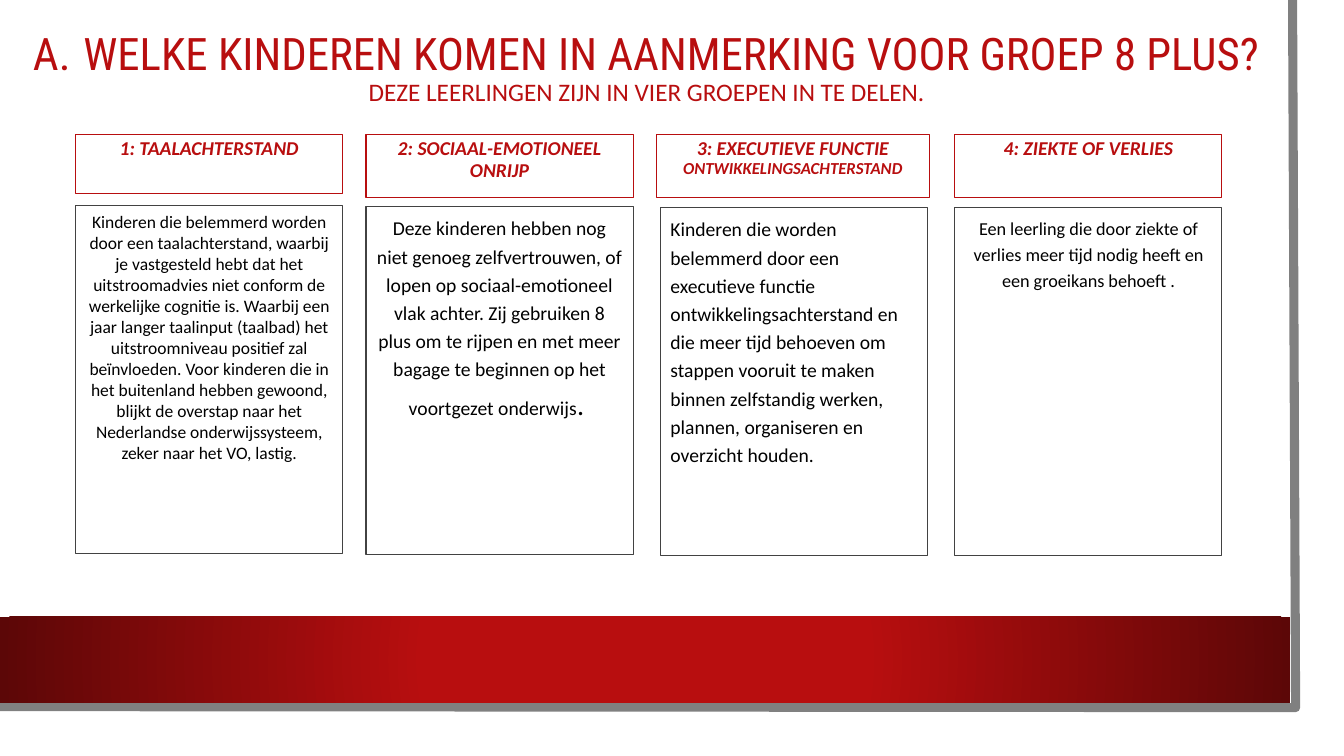
from lxml import etree
from pptx import Presentation
from pptx.dml.color import RGBColor
from pptx.enum.shapes import MSO_SHAPE as Shape
from pptx.enum.text import MSO_ANCHOR as Anchor, MSO_AUTO_SIZE as Auto, PP_ALIGN as Align
from pptx.oxml import parse_xml
from pptx.oxml.ns import nsdecls, qn
from pptx.util import Inches, Pt

RED, DARK, GREY, BLACK = "B80E0F", "5C0707", "424242", "000000"
HEAD = {"size": Pt(14), "bold": True, "italic": True}
WIDTH = 2.65

# left, head left, head width, head height, head runs
HEADS = [
    (0.75, WIDTH, 0.59, [("1: TAALACHTERSTAND", HEAD)]),
    (3.63, WIDTH, 0.63, [("2: SOCIAAL-EMOTIONEEL ONRIJP", HEAD)]),
    (6.51, 2.71, 0.63, [("3: EXECUTIEVE FUNCTIE ", HEAD),
                        ("ONTWIKKELINGSACHTERSTAND", HEAD | {"size": Pt(12)})]),
    (9.47, WIDTH, 0.63, [("4: ZIEKTE OF VERLIES", HEAD)]),
]

# left, top, alignment, line spacing, runs
BODIES = [
    (0.75, 2.04, Align.CENTER, 1.0, [(
        "Kinderen die belemmerd worden door een taalachterstand, waarbij je "
        "vastgesteld hebt dat het uitstroomadvies niet conform de werkelijke "
        "cognitie is. Waarbij een jaar langer taalinput (taalbad) het "
        "uitstroomniveau positief zal beïnvloeden. Voor kinderen die in het "
        "buitenland hebben gewoond, blijkt de overstap naar het Nederlandse "
        "onderwijssysteem, zeker naar het VO, lastig.", {"size": Pt(12.5)})]),
    (3.63, 2.05, Align.CENTER, 1.2, [(
        "Deze kinderen hebben nog niet genoeg zelfvertrouwen, of lopen op "
        "sociaal-emotioneel vlak achter. Zij gebruiken 8 plus om te rijpen en "
        "met meer bagage te beginnen op het voortgezet onderwijs",
        {"size": Pt(14)}), (". ", {"size": Pt(20)})]),
    (6.55, 2.06, Align.LEFT, 1.2, [(
        "Kinderen die worden belemmerd door een executieve functie "
        "ontwikkelingsachterstand en die meer tijd behoeven om stappen vooruit "
        "te maken binnen zelfstandig werken, plannen, organiseren en overzicht "
        "houden.", {"size": Pt(14)})]),
    (9.47, 2.06, Align.CENTER, 1.2, [(
        "Een leerling die door ziekte of verlies meer tijd nodig heeft en een "
        "groeikans behoeft .", {"size": Pt(13)})]),
]


def rgb(color):
    return RGBColor.from_string(color)


def add_run(para, text, color, form):
    run = para.add_run()
    run.text = text
    run.font.color.rgb = rgb(color)
    for key, value in ({"name": "Calibri"} | form).items():
        setattr(run.font, key, value)


def add_rect(slide, left, top, width, height):
    rect = slide.shapes.add_shape(
        Shape.RECTANGLE, *map(Inches, (left, top, width, height)))
    rect.shadow.inherit = False
    rect.line.fill.background()
    return rect


def add_box(slide, place, edge, color, align, space, runs):
    box = add_rect(slide, *place)
    box.fill.background()
    box.line.color.rgb = rgb(edge)
    box.line.width = Pt(0.75)
    frame = box.text_frame
    frame.word_wrap = True
    frame.vertical_anchor = Anchor.TOP
    para = frame.paragraphs[0]
    para.alignment = align
    para.line_spacing = space
    for text, form in runs:
        add_run(para, text, color, form)


def add_page(slide):
    """Draw the white sheet with its grey edge along the right and bottom."""
    sheet = add_rect(slide, 0, 0, 13.1, 7.27)
    sheet.fill.solid()
    sheet.fill.fore_color.rgb = rgb("FFFFFF")
    build = slide.shapes.build_freeform(Inches(12.82), 0)
    build.add_line_segments(
        [(Inches(12.85), Inches(7.02)), (Inches(-0.03), Inches(7.01))], close=False)
    edge = build.convert_to_shape()
    edge.shadow.inherit = False
    edge.fill.background()
    edge.line.color.rgb = rgb("808080")
    edge.line.width = Pt(6.5)


def add_band(slide):
    band = add_rect(slide, 0, 6.12, 12.8, 0.85)
    band.fill.gradient()
    stops = zip(band.fill.gradient_stops, ((0.34, RED), (1, DARK)))
    for stop, (place, color) in stops:
        stop.position = place
        stop.color.rgb = rgb(color)
    grad = band.element.spPr.find(qn("a:gradFill"))
    grad.replace(grad.find(qn("a:lin")), parse_xml(
        f'<a:path {nsdecls("a")} path="circle">'
        '<a:fillToRect l="50000" t="50000" r="50000" b="50000"/></a:path>'))


def set_title(slide):
    title = slide.shapes.title
    title.left, title.top, title.width, title.height = map(
        Inches, (0.13, 0, 12.57, 1.38))
    frame = title.text_frame
    frame.word_wrap = True
    frame.auto_size = Auto.NONE
    frame.vertical_anchor = Anchor.MIDDLE
    para = frame.paragraphs[0]
    para.alignment = Align.CENTER
    para.line_spacing = 0.9
    add_run(para, "A.\tWELKE KINDEREN KOMEN IN AANMERKING VOOR GROEP 8 PLUS?",
            RED, {"name": "Roboto Condensed", "size": Pt(32)})
    para.add_line_break()
    add_run(para, "DEZE LEERLINGEN ZIJN IN VIER GROEPEN IN TE DELEN.",
            RED, {"size": Pt(18)})
    # Bring the title in front of the page and band
    slide.shapes.element.append(title.element)


def main():
    deck = Presentation()
    deck.slide_width, deck.slide_height = Inches(13.33), Inches(7.5)
    slide = deck.slides.add_slide(deck.slide_layouts[5])
    add_page(slide)
    add_band(slide)
    set_title(slide)
    for left, width, height, runs in HEADS:
        add_box(slide, (left, 1.33, width, height), RED, RED,
                Align.CENTER, 0.9, runs)
    for left, top, align, space, runs in BODIES:
        add_box(slide, (left, top, WIDTH, 3.45), GREY, BLACK, align, space, runs)
    deck.save("out.pptx")


if __name__ == "__main__":
    main()
